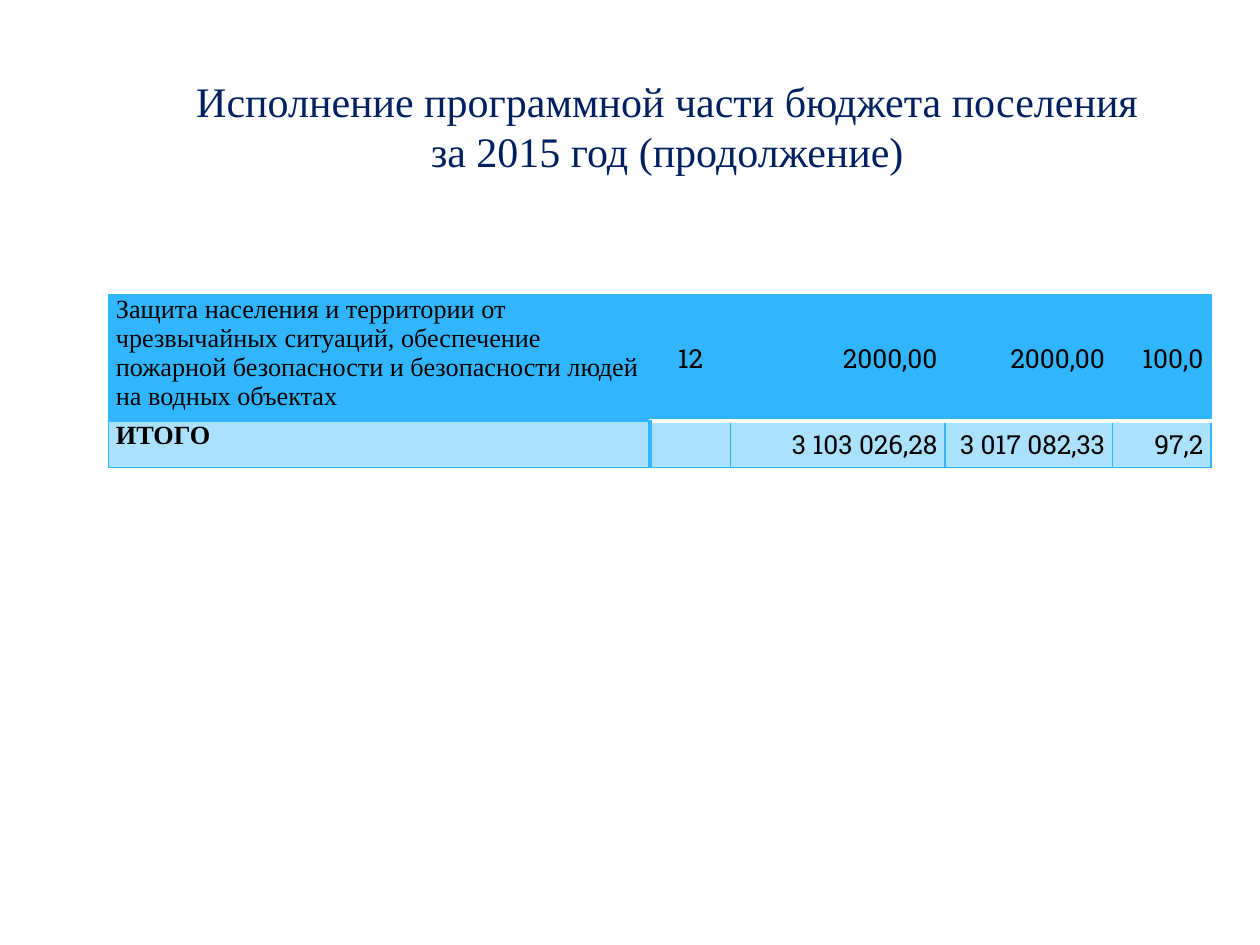
from lxml.etree import SubElement
from pptx import Presentation
from pptx.dml.color import RGBColor
from pptx.enum.text import MSO_ANCHOR as Anchor, PP_ALIGN as Align
from pptx.oxml.ns import qn
from pptx.util import Inches, Pt

NAVY = RGBColor(0x00, 0x20, 0x60)
BLACK = RGBColor(0x00, 0x00, 0x00)
BLUE = RGBColor(0x31, 0xB6, 0xFD)
WHITE = RGBColor(0xFF, 0xFF, 0xFF)
SERIF, SLAB = "Times New Roman", "Roboto Slab"

COLUMN_WIDTHS = (4.3, 0.64, 1.7, 1.33, 0.78)
ROW_HEIGHTS = (0.93, 0.37)
ALIGNMENTS = (Align.LEFT, Align.CENTER, Align.RIGHT, Align.RIGHT, Align.RIGHT)
BUDGET_ROWS = (
    ("Защита населения и территории от чрезвычайных ситуаций, обеспечение "
     "пожарной безопасности и безопасности людей на водных объектах",
     "12", "2000,00", "2000,00", "100,0"),
    ("ИТОГО", "", "3 103 026,28", "3 017 082,33", "97,2"),
)


class BudgetSlide:
    """Holds the style and the current slide and adds its elements."""

    def __init__(self, deck):
        self.page = deck.slides.add_slide(deck.slide_layouts[6])

    def add_span(self, para, text, font, size, color, bold=False):
        span = para.add_run()
        span.text = text
        span.font.name, span.font.size, span.font.bold = font, Pt(size), bold
        span.font.color.rgb = color

    def add_title(self, lines, left, top, width, height):
        box = self.page.shapes.add_textbox(
            Inches(left), Inches(top), Inches(width), Inches(height))
        frame = box.text_frame
        frame.word_wrap = True
        frame.vertical_anchor = Anchor.MIDDLE
        para = frame.paragraphs[0]
        para.alignment = Align.CENTER
        for index, line in enumerate(lines):
            if index:
                para.add_line_break()
            self.add_span(para, line, SERIF, 24, NAVY)

    def set_borders(self, cell, borders):
        properties = cell._tc.get_or_add_tcPr()
        for side in ("L", "R", "T", "B"):
            color, width = borders.get(side, (BLUE, 1))
            line = SubElement(properties, qn(f"a:ln{side}"), w=str(Pt(width)))
            fill = SubElement(line, qn("a:solidFill"))
            SubElement(fill, qn("a:srgbClr"), val=str(color))

    def set_fill(self, cell, color, opacity):
        cell.fill.solid()
        cell.fill.fore_color.rgb = color
        if opacity < 100:
            tint = cell._tc.tcPr.find(f"{qn('a:solidFill')}/{qn('a:srgbClr')}")
            SubElement(tint, qn("a:alpha"), val=str(opacity * 1000))

    def add_cell(self, cell, text, row, column):
        cell.margin_left = cell.margin_right = Inches(0.06)
        cell.margin_top = cell.margin_bottom = 0
        label = column == 0
        cell.vertical_anchor = Anchor.TOP if label else Anchor.MIDDLE
        para = cell.text_frame.paragraphs[0]
        para.alignment = ALIGNMENTS[column]
        if text:
            self.add_span(para, text, SERIF if label else SLAB, 15, BLACK,
                          bold=label and row == 1)
        borders = {}
        if not label:
            borders["T" if row else "B"] = (WHITE, 3)
        if row and column < 2:
            borders["R" if label else "L"] = (BLUE, 3)
        self.set_borders(cell, borders)
        self.set_fill(cell, BLUE, 40 if row else 100)

    def add_table(self, rows, left, top):
        table = self.page.shapes.add_table(
            len(rows), len(COLUMN_WIDTHS), Inches(left), Inches(top),
            Inches(sum(COLUMN_WIDTHS)), Inches(sum(ROW_HEIGHTS))).table
        table.first_row = table.horz_banding = False
        for column, width in zip(table.columns, COLUMN_WIDTHS):
            column.width = Inches(width)
        for row, height in zip(table.rows, ROW_HEIGHTS):
            row.height = Inches(height)
        for row, texts in enumerate(rows):
            for column, text in enumerate(texts):
                self.add_cell(table.cell(row, column), text, row, column)


def main():
    deck = Presentation()
    deck.slide_width, deck.slide_height = Inches(10), Inches(7.5)
    slide = BudgetSlide(deck)
    slide.add_title(("Исполнение программной части бюджета поселения",
                     "за 2015 год (продолжение)"), 1.22, 0.52, 8.15, 0.96)
    slide.add_table(BUDGET_ROWS, 0.86, 2.34)
    deck.save("out.pptx")


if __name__ == "__main__":
    main()
